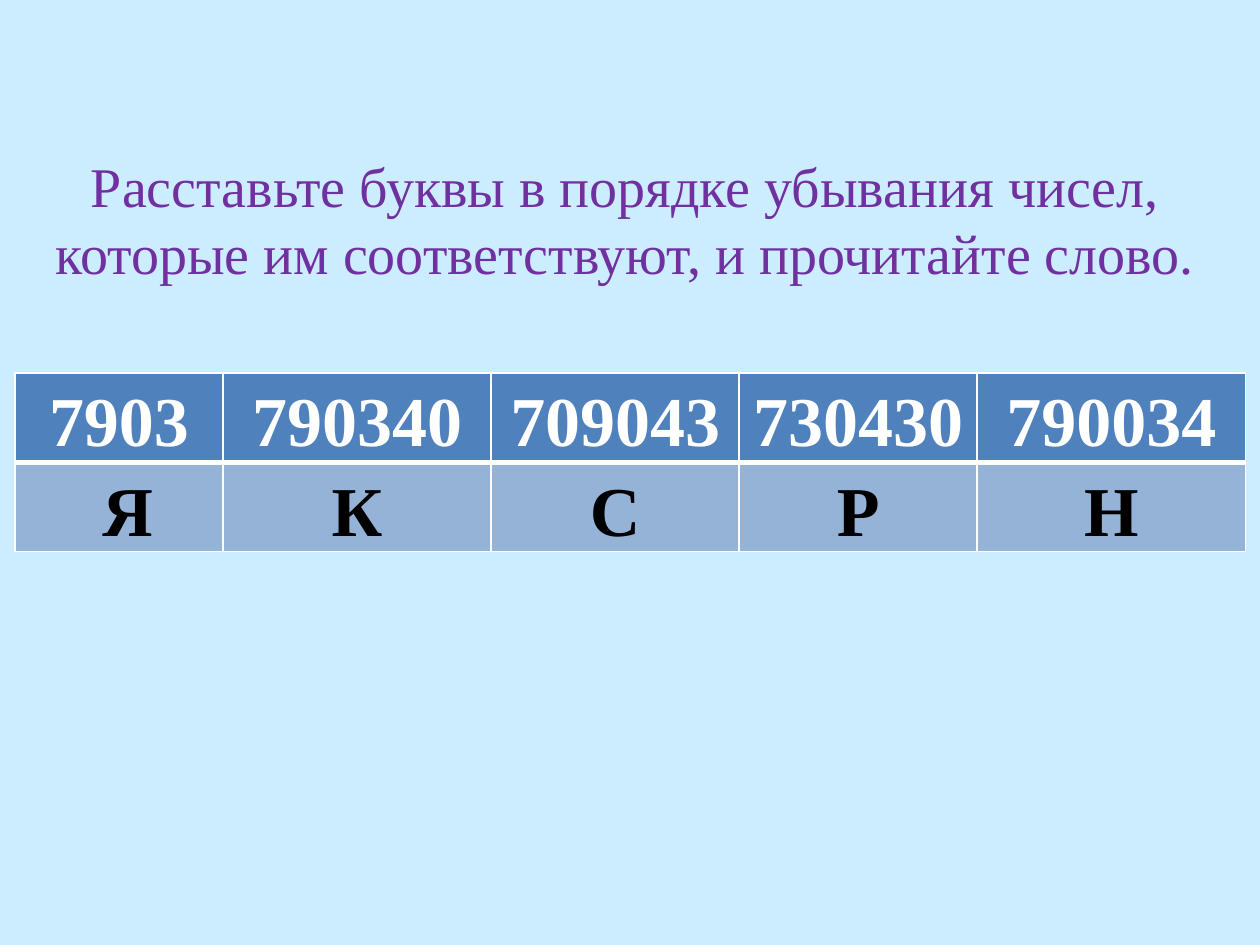
from lxml.etree import SubElement
from pptx import Presentation
from pptx.dml.color import RGBColor
from pptx.enum.text import MSO_AUTO_SIZE as AutoSize, PP_ALIGN as Align
from pptx.oxml.ns import qn
from pptx.util import Pt

NUMBERS = ["7903", "790340", "709043", "730430", "790034"]
LETTERS = [" Я", "К", "С", "Р", "Н"]
COLUMN_WIDTHS = [118.8, 153.3, 141.7, 136, 153.3]
ROW_HEIGHT = 51


def color(hex_code):
    return RGBColor.from_string(hex_code)


class PuzzleSlide:
    font = "Times New Roman"
    background = "CCECFF"
    task_color = "7030A0"
    border_color = "FFFFFF"
    thin, thick = 1, 3

    def __init__(self, slide):
        self.slide = slide
        fill = slide.background.fill
        fill.solid()
        fill.fore_color.rgb = color(self.background)

    def format_text(self, frame, size, ink, bold=False):
        paragraph = frame.paragraphs[0]
        paragraph.alignment = Align.CENTER
        for run in paragraph.runs:
            run.font.name = self.font
            run.font.size = Pt(size)
            run.font.bold = bold
            run.font.color.rgb = color(ink)
        return paragraph

    def task(self, text, left, top, width, height):
        box = self.slide.shapes.add_textbox(Pt(left), Pt(top), Pt(width), Pt(height))
        frame = box.text_frame
        frame.word_wrap = True
        frame.auto_size = AutoSize.SHAPE_TO_FIT_TEXT
        frame.text = text
        self.format_text(frame, 32, self.task_color)

    def border(self, cell, top, bottom):
        properties = cell._tc.get_or_add_tcPr()
        widths = {"L": self.thin, "R": self.thin, "T": top, "B": bottom}
        for side, width in widths.items():
            line = SubElement(properties, qn(f"a:ln{side}"), w=str(Pt(width)))
            solid = SubElement(line, qn("a:solidFill"))
            SubElement(solid, qn("a:srgbClr"), val=self.border_color)

    def cell(self, cell, text, fill, ink, top, bottom):
        self.border(cell, top, bottom)
        cell.fill.solid()
        cell.fill.fore_color.rgb = color(fill)
        cell.margin_left = cell.margin_right = Pt(5)
        cell.margin_top = cell.margin_bottom = 0
        cell.text_frame.text = text
        self.format_text(cell.text_frame, 40, ink, bold=True).line_spacing = 1.15

    def letter_table(self, left, top):
        table = self.slide.shapes.add_table(
            2, len(NUMBERS), Pt(left), Pt(top),
            Pt(sum(COLUMN_WIDTHS)), Pt(2 * ROW_HEIGHT)).table
        for column, width in zip(table.columns, COLUMN_WIDTHS):
            column.width = Pt(width)
        rows = [
            (NUMBERS, "4F81BD", "FFFFFF", self.thin, self.thick),
            (LETTERS, "95B3D7", "000000", self.thick, self.thin),
        ]
        for row, (texts, *look) in zip(table.rows, rows):
            row.height = Pt(ROW_HEIGHT)
            for cell, text in zip(row.cells, texts):
                self.cell(cell, text, *look)


def main():
    deck = Presentation()
    deck.slide_width, deck.slide_height = Pt(720), Pt(540)
    puzzle = PuzzleSlide(deck.slides.add_slide(deck.slide_layouts[6]))
    puzzle.letter_table(8.6, 213.1)
    puzzle.task("Расставьте буквы в порядке убывания чисел, "
                "которые им соответствуют, и прочитайте слово.",
                8.6, 82.8, 697.7, 85)
    deck.save("out.pptx")


if __name__ == "__main__":
    main()
